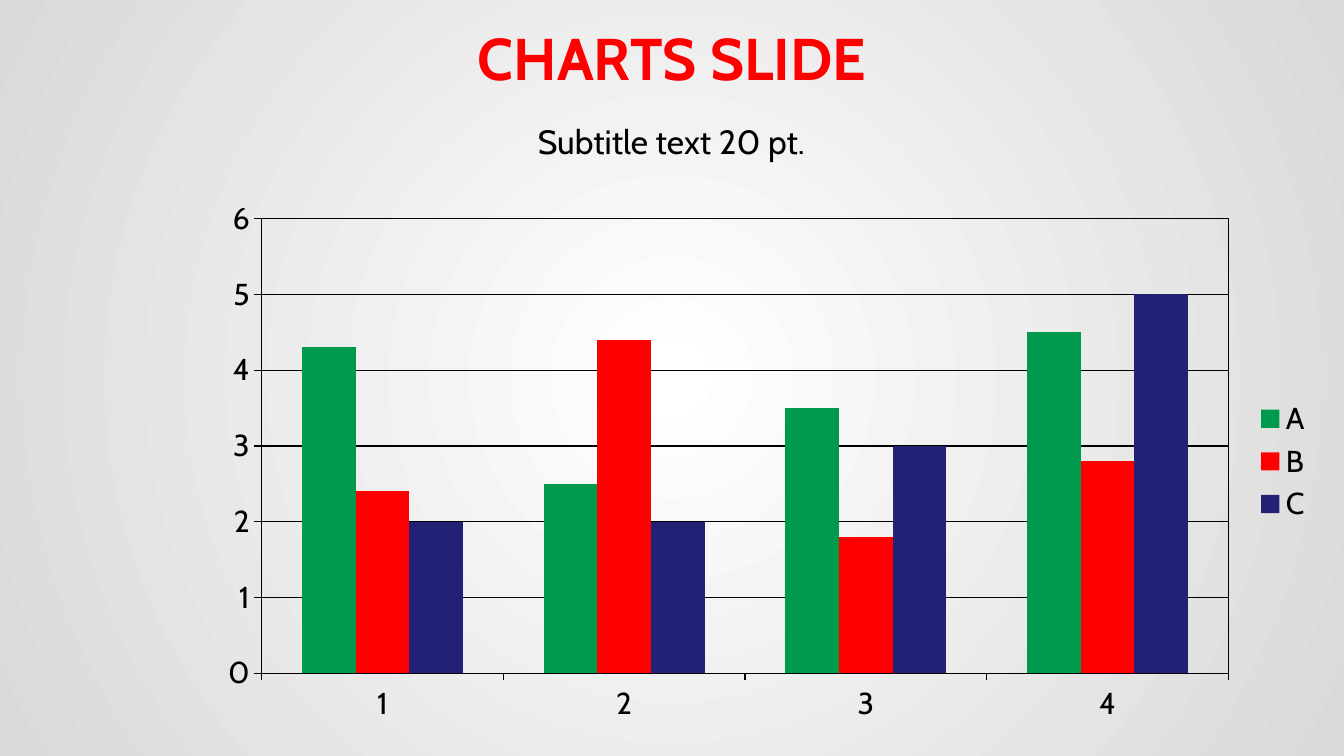
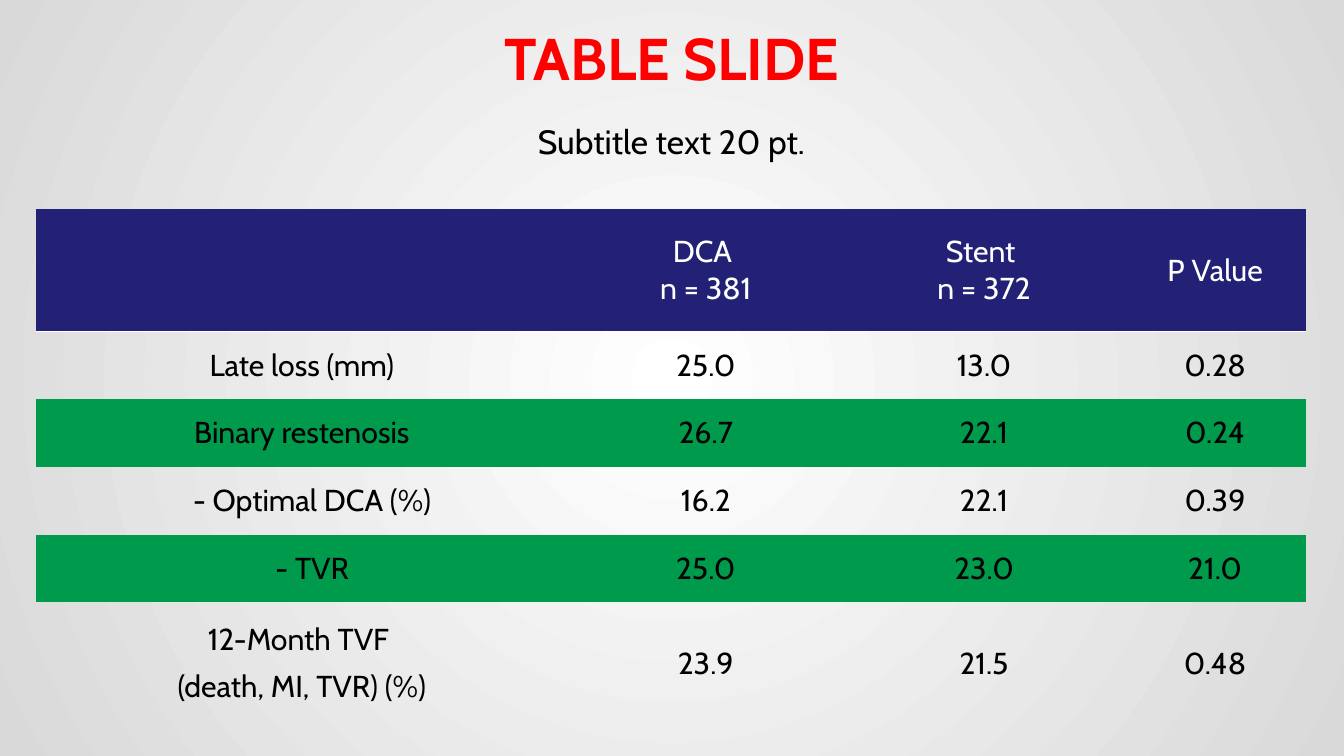
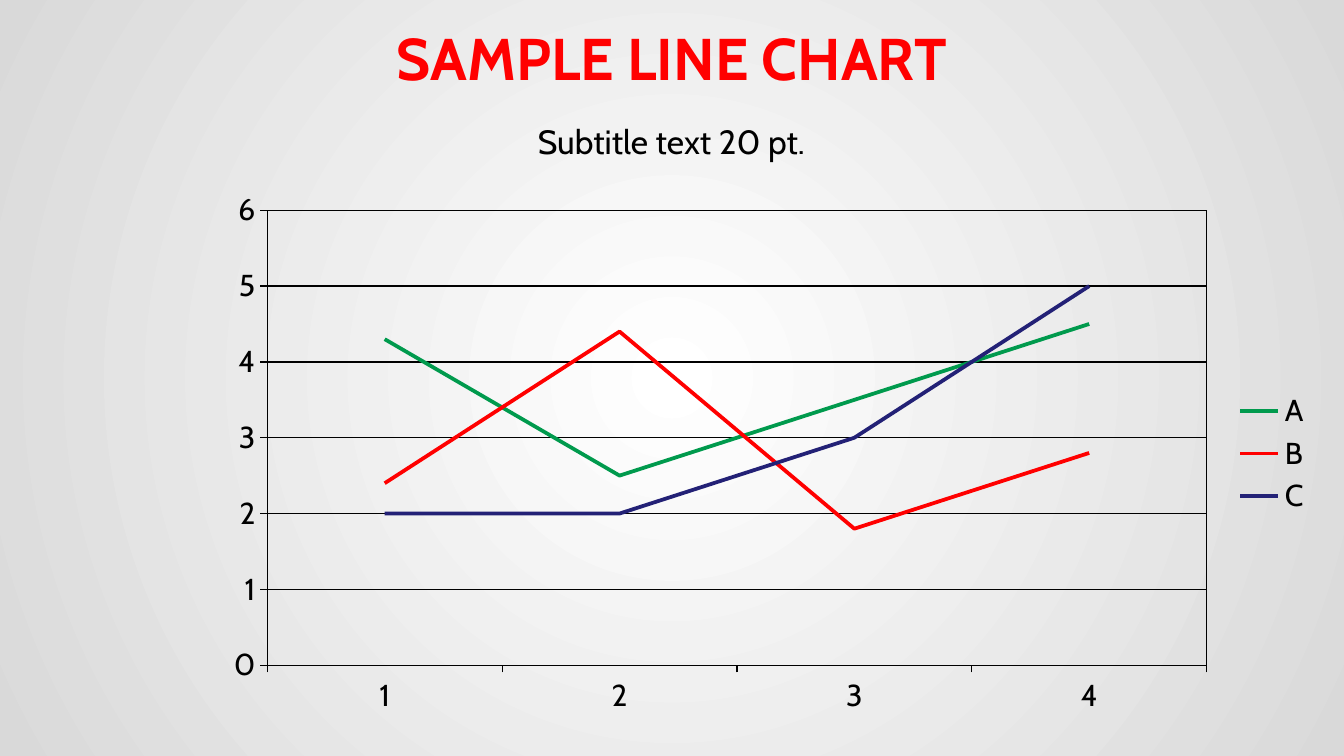
"""Build a three-slide deck with a column chart, a table and a line chart."""
import pptx
import pptx.chart.data
import pptx.dml.color
import pptx.enum.chart
import pptx.enum.text
import pptx.oxml
import pptx.oxml.ns
import pptx.util

Inches = pptx.util.Inches
Pt = pptx.util.Pt
ChartType = pptx.enum.chart.XL_CHART_TYPE
Anchor = pptx.enum.text.MSO_ANCHOR
qn = pptx.oxml.ns.qn

WIDTH, HEIGHT = 11.11, 6.25
FONT = "Cabin"
COLORS = {
    "title": "FF0000", "text": "000000", "light": "FFFFFF", "edge": "D9D9D9",
    "green": "009A4D", "red": "FF0000", "navy": "232176",
}
TITLE_BOX = (0, 0.21, WIDTH, 0.59)
TITLE_FORMAT = {"size": Pt(35), "bold": True}
SUBTITLE = "Subtitle text 20 pt."
SUBTITLE_FORMAT = {"size": Pt(20)}
BODY_FORMAT = {"size": Pt(18)}

CATEGORIES = ["1", "2", "3", "4"]
SERIES = [
    ("A", "green", (4.3, 2.5, 3.5, 4.5)),
    ("B", "red", (2.4, 4.4, 1.8, 2.8)),
    ("C", "navy", (2, 2, 3, 5)),
]
COLUMN_CHART = {
    "type": ChartType.COLUMN_CLUSTERED,
    "box": (1.7, 1.57, 9.25, 4.49),
    "plot": {"x": 0.05, "y": 0.053, "w": 0.864, "h": 0.837},
}
LINE_CHART = {
    "type": ChartType.LINE,
    "box": (1.75, 1.5, 9.19, 4.5),
    "plot": {"x": 0.05, "y": 0.053, "w": 0.845, "h": 0.836},
}

TABLE_BOX = (0.3, 1.73, 10.5, 4.26)
COLUMN_WIDTHS = [4.39, 2.29, 2.31, 1.51]
ROW_HEIGHTS = [1.01, 0.56, 0.56, 0.56, 0.56, 1.01]
TABLE_ROWS = [
    ("", "DCA \vn = 381", "Stent \vn = 372", "P Value"),
    ("Late loss (mm)", "25.0", "13.0", "0.28"),
    ("Binary restenosis", "26.7", "22.1", "0.24"),
    ("- Optimal DCA (%)", "16.2", "22.1", "0.39"),
    ("- TVR", "25.0", "23.0", "21.0"),
    ("12-Month TVF \n(death, MI, TVR) (%)", "23.9", "21.5", "0.48"),
]
CELL_FORMAT = {
    "margin_left": Inches(0.11), "margin_right": Inches(0.11),
    "margin_top": Inches(0.06), "margin_bottom": Inches(0.06),
    "vertical_anchor": Anchor.MIDDLE,
}
SUBITEM_INDENT = Inches(0.17)
PLAIN_TABLE_STYLE = "{2D5ABB26-0587-4C30-8999-92F81FD0307C}"


def rgb(name):
    return pptx.dml.color.RGBColor.from_string(COLORS[name])


def xml(tag, content):
    prefix = tag.split(":")[0]
    namespaces = pptx.oxml.ns.nsdecls(*dict.fromkeys((prefix, "a")))
    return pptx.oxml.parse_xml(f"<{tag} {namespaces}>{content}</{tag}>")


def apply(target, settings):
    for name, value in settings.items():
        setattr(target, name, value)


def style_font(font, color, settings):
    apply(font, {"name": FONT, **settings})
    font.color.rgb = rgb(color)


def style_line(line, color, width):
    line.color.rgb = rgb(color)
    line.width = Pt(width)


def style_text(frame, color, settings, line_spacing=1.0, gap=0):
    for index, paragraph in enumerate(frame.paragraphs):
        apply(paragraph, {
            "alignment": pptx.enum.text.PP_ALIGN.CENTER,
            "line_spacing": line_spacing,
            "space_before": Pt(gap if index else 0),
        })
        for run in paragraph.runs:
            style_font(run.font, color, settings)


def set_background(master):
    fill = master.background.fill
    fill.gradient()
    for stop, position, color in zip(fill.gradient_stops, (0, 1), ("light", "edge")):
        stop.position = position
        stop.color.rgb = rgb(color)
    gradient = master.element.find(".//" + qn("a:gradFill"))
    circle = xml("a:path", '<a:fillToRect l="50000" t="50000" r="50000" b="50000"/>')
    circle.set("path", "circle")
    gradient.replace(gradient.find(qn("a:lin")), circle)


def fill_placeholder(shape, text, box, color, settings, anchor):
    apply(shape, dict(zip(("left", "top", "width", "height"), map(Inches, box))))
    frame = shape.text_frame
    frame.text = text
    apply(frame, {
        "auto_size": pptx.enum.text.MSO_AUTO_SIZE.NONE, "word_wrap": True,
        "vertical_anchor": anchor,
    })
    style_text(frame, color, settings, line_spacing=0.9)
    return frame


def add_slide(presentation, title, subtitle_height):
    slide = presentation.slides.add_slide(presentation.slide_layouts[1])
    title_frame = fill_placeholder(
        slide.shapes.title, title, TITLE_BOX, "title", TITLE_FORMAT, Anchor.MIDDLE)
    apply(title_frame, {f"margin_{side}": Inches(0.05)
                        for side in ("left", "top", "right", "bottom")})
    subtitle_frame = fill_placeholder(
        slide.placeholders[1], SUBTITLE, (0.3, 0.99, 10.5, subtitle_height),
        "text", SUBTITLE_FORMAT, Anchor.TOP)
    properties = subtitle_frame.paragraphs[0]._p.get_or_add_pPr()
    properties.set("marL", "0")
    properties.set("indent", "0")
    properties.append(xml("a:buNone", ""))
    return slide


def frame_plot(chart, shares):
    plot_area = chart._chartSpace.chart.plotArea
    for layout in plot_area.findall(qn("c:layout")):
        plot_area.remove(layout)
    edges = '<c:layoutTarget val="inner"/><c:xMode val="edge"/><c:yMode val="edge"/>'
    sizes = "".join(f'<c:{name} val="{share}"/>' for name, share in shares.items())
    plot_area.insert(0, xml("c:layout", f"<c:manualLayout>{edges}{sizes}</c:manualLayout>"))
    border = f'<a:solidFill><a:srgbClr val="{COLORS["text"]}"/></a:solidFill>'
    plot_area.append(xml("c:spPr", f'<a:noFill/><a:ln w="{Pt(0.75)}">{border}</a:ln>'))


def add_chart(slide, design):
    data = pptx.chart.data.CategoryChartData()
    data.categories = CATEGORIES
    for name, _, values in SERIES:
        data.add_series(name, values)
    chart = slide.shapes.add_chart(
        design["type"], *map(Inches, design["box"]), data).chart
    apply(chart, {"has_title": False, "has_legend": True})
    style_font(chart.font, "text", BODY_FORMAT)
    apply(chart.legend, {
        "position": pptx.enum.chart.XL_LEGEND_POSITION.RIGHT,
        "include_in_layout": False,
    })
    style_font(chart.legend.font, "text", BODY_FORMAT)
    apply(chart.value_axis, {
        "minimum_scale": 0, "maximum_scale": 6, "major_unit": 1,
        "has_major_gridlines": True,
    })
    style_line(chart.value_axis.major_gridlines.format.line, "text", 0.75)
    for axis in (chart.category_axis, chart.value_axis):
        axis.major_tick_mark = pptx.enum.chart.XL_TICK_MARK.OUTSIDE
        style_line(axis.format.line, "text", 0.75)
        style_font(axis.tick_labels.font, "text", BODY_FORMAT)
    plot = chart.plots[0]
    plot.vary_by_categories = False
    is_line = design["type"] == ChartType.LINE
    if not is_line:
        apply(plot, {"gap_width": 150, "overlap": 0})
    for series, (_, color, _) in zip(plot.series, SERIES):
        if is_line:
            series.smooth = False
            series.marker.style = pptx.enum.chart.XL_MARKER_STYLE.NONE
            style_line(series.format.line, color, 2.25)
        else:
            series.format.fill.solid()
            series.format.fill.fore_color.rgb = rgb(color)
    frame_plot(chart, design["plot"])


def fill_cell(cell, text, is_header, is_banded):
    cell.text = text
    apply(cell, CELL_FORMAT)
    if text.startswith("- "):
        cell.margin_left += SUBITEM_INDENT
    style_text(cell.text_frame, "light" if is_header else "text", BODY_FORMAT, gap=6)
    if is_header or is_banded:
        cell.fill.solid()
        cell.fill.fore_color.rgb = rgb("navy" if is_header else "green")
    else:
        cell.fill.background()
    if is_header:
        rule = xml("a:lnB", f'<a:solidFill><a:srgbClr val="{COLORS["light"]}"/></a:solidFill>')
        rule.set("w", str(Pt(1)))
        cell._tc.get_or_add_tcPr().insert(0, rule)


def add_table(slide):
    table = slide.shapes.add_table(
        len(ROW_HEIGHTS), len(COLUMN_WIDTHS), *map(Inches, TABLE_BOX)).table
    apply(table, {"first_row": False, "horz_banding": False})
    table._tbl.tblPr.find(qn("a:tableStyleId")).text = PLAIN_TABLE_STYLE
    for column, width in zip(table.columns, COLUMN_WIDTHS):
        column.width = Inches(width)
    for index, (row, height, texts) in enumerate(zip(table.rows, ROW_HEIGHTS, TABLE_ROWS)):
        row.height = Inches(height)
        for cell, text in zip(row.cells, texts):
            fill_cell(cell, text, index == 0, index % 2 == 0)


def main():
    presentation = pptx.Presentation()
    presentation.slide_width, presentation.slide_height = Inches(WIDTH), Inches(HEIGHT)
    set_background(presentation.slide_master)
    add_chart(add_slide(presentation, "CHARTS SLIDE", 0.4), COLUMN_CHART)
    add_table(add_slide(presentation, "TABLE SLIDE", 4.81))
    add_chart(add_slide(presentation, "SAMPLE LINE CHART", 4.81), LINE_CHART)
    presentation.save("out.pptx")


if __name__ == "__main__":
    main()
